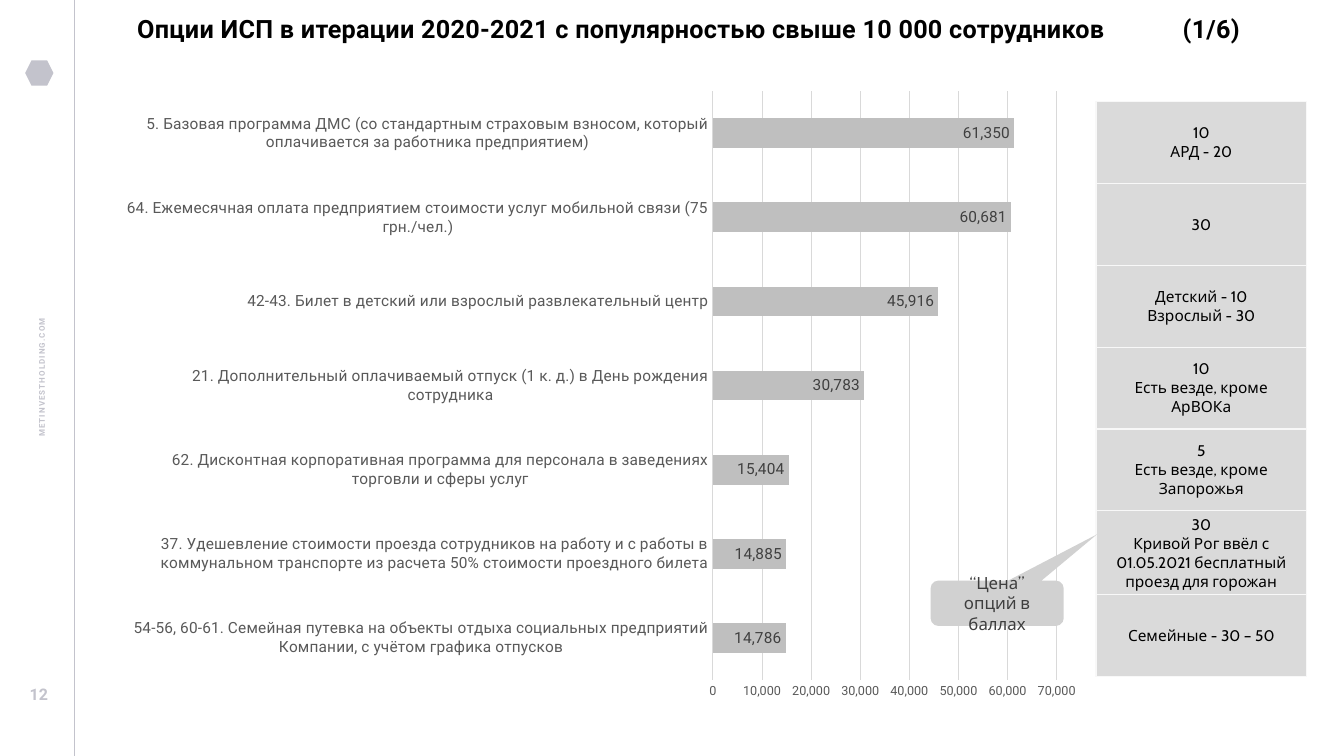
from lxml.etree import SubElement as Sub
from pptx import Presentation
from pptx.chart.data import CategoryChartData
from pptx.dml.color import RGBColor
from pptx.enum.chart import XL_CHART_TYPE as Kind, XL_LABEL_POSITION as Pos, XL_TICK_MARK as Tick
from pptx.enum.shapes import MSO_CONNECTOR as Link, MSO_SHAPE as Shape
from pptx.enum.text import MSO_ANCHOR as Anchor, PP_ALIGN as Align
from pptx.oxml import parse_xml
from pptx.oxml.ns import nsdecls, qn
from pptx.util import Inches, Pt

BLACK = RGBColor(0x00, 0x00, 0x00)
SIDE = RGBColor(0xC3, 0xC3, 0xCC)
GRID = RGBColor(0xD9, 0xD9, 0xD9)
BAR = RGBColor(0xBF, 0xBF, 0xBF)
LABEL = RGBColor(0x40, 0x40, 0x40)
AXIS = RGBColor(0x59, 0x59, 0x59)
CELL = RGBColor(0xDA, 0xDA, 0xDA)
EDGE = RGBColor(0xF8, 0xF8, 0xF8)
NOTE = RGBColor(0xD1, 0xD1, 0xD1)
INK = RGBColor(0x3E, 0x3E, 0x3E)

# Option, number of employees, price in points (top to bottom)
OPTIONS = [
    ("5. Базовая программа ДМС (со стандартным страховым взносом, который "
     "оплачивается за работника предприятием)", 61350, ["10", "АРД - 20"]),
    ("64. Ежемесячная оплата предприятием стоимости услуг мобильной связи "
     "(75 грн./чел.)", 60681, ["30"]),
    ("42-43. Билет в детский или взрослый развлекательный центр", 45916,
     ["Детский - 10", "Взрослый - 30"]),
    ("21. Дополнительный оплачиваемый отпуск (1 к. д.) в День рождения "
     "сотрудника", 30783, ["10", "Есть везде, кроме АрВОКа"]),
    ("62. Дисконтная корпоративная программа для персонала в заведениях "
     "торговли и сферы услуг", 15404, ["5", "Есть везде, кроме Запорожья"]),
    ("37. Удешевление стоимости проезда сотрудников на работу и с работы в "
     "коммунальном транспорте из расчета 50% стоимости проездного билета", 14885,
     ["30", "Кривой Рог ввёл с 01.05.2021 бесплатный проезд для горожан"]),
    ("54-56, 60-61. Семейная путевка на объекты отдыха социальных предприятий "
     "Компании, с учётом графика отпусков", 14786, ["Семейные - 30 – 50"]),
]


def style(font, size, color, name="Roboto", bold=False):
    font.size, font.name, font.bold = Pt(size), name, bold
    font.color.rgb = color


def write(frame, lines, size, color, name="Roboto", bold=False, align=Align.CENTER, track=0):
    """Fill a text frame, one paragraph per line; track is letter spacing in points."""
    frame.word_wrap = True
    for i, line in enumerate(lines):
        para = frame.add_paragraph() if i else frame.paragraphs[0]
        para.alignment = align
        run = para.add_run()
        run.text = line
        style(run.font, size, color, name, bold)
        if track:
            run.font._element.set("spc", str(round(track * 100)))


deck = Presentation()
deck.slide_width, deck.slide_height = Inches(13.33), Inches(7.5)
slide = deck.slides.add_slide(deck.slide_layouts[6])
shapes = slide.shapes

# Side strip
mark = shapes.add_shape(Shape.HEXAGON, Inches(0.25), Inches(0.6), Inches(0.28), Inches(0.25))
mark.shadow.inherit = False
mark.fill.solid()
mark.fill.fore_color.rgb = SIDE
mark.line.fill.background()

site = shapes.add_textbox(Inches(-2.6), Inches(3.61), Inches(5.98), Inches(0.27))
site.rotation = 270
write(site.text_frame, ["METINVESTHOLDING.COM"], 5.7, SIDE, bold=True, track=0.8)
site.text_frame.vertical_anchor = Anchor.MIDDLE
site.text_frame.paragraphs[0].line_spacing = 1.5

rule = shapes.add_connector(Link.STRAIGHT, Inches(0.74), Inches(7.5), Inches(0.74), Inches(0))
rule.line.color.rgb = SIDE
rule.line.width = Pt(0.5)
Sub(rule._element.spPr, qn("a:effectLst"))

page = shapes.add_textbox(Inches(0), Inches(6.74), Inches(0.77), Inches(0.29))
write(page.text_frame, ["12"], 11.4, SIDE, bold=True)

# Chart
data = CategoryChartData(number_format="#,##0")
data.categories = [name for name, _, _ in reversed(OPTIONS)]
data.add_series("Series 1", [count for _, count, _ in reversed(OPTIONS)])
chart = shapes.add_chart(Kind.BAR_CLUSTERED, Inches(1.13), Inches(0.78),
                         Inches(9.74), Inches(6.28), data).chart
chart.has_legend = chart.has_title = False
style(chart.font, 10, BLACK)

names, scale = chart.category_axis, chart.value_axis
for axis, size in ((names, 11), (scale, 9)):
    axis.major_tick_mark = axis.minor_tick_mark = Tick.NONE
    style(axis.tick_labels.font, size, AXIS)
names.format.line.color.rgb = GRID
names.format.line.width = Pt(0.75)
scale.minimum_scale, scale.maximum_scale, scale.major_unit = 0, 70000, 10000
scale.format.line.fill.background()
scale.major_gridlines.format.line.color.rgb = GRID
scale.major_gridlines.format.line.width = Pt(0.75)
scale.tick_labels.number_format = "#,##0"
scale.tick_labels.number_format_is_linked = False

plot = chart.plots[0]
plot.gap_width = 182
plot.vary_by_categories = False
bars = plot.series[0].format
bars.fill.solid()
bars.fill.fore_color.rgb = BAR
plot.has_data_labels = True
tags = plot.data_labels
tags.show_value = True
tags.position = Pos.INSIDE_END
tags.number_format = "#,##0"
tags.number_format_is_linked = False
style(tags.font, 11, LABEL)

area = chart._chartSpace.chart.plotArea
for old in area.findall(qn("c:layout")):
    area.remove(old)
area.insert(0, parse_xml(
    f'<c:layout {nsdecls("c")}><c:manualLayout><c:layoutTarget val="inner"/>'
    '<c:xMode val="edge"/><c:yMode val="edge"/><c:x val="0.61"/><c:y val="0.02"/>'
    '<c:w val="0.35"/><c:h val="0.93"/></c:manualLayout></c:layout>'))

# Title
title = shapes.add_textbox(Inches(1.36), Inches(0.13), Inches(11.51), Inches(0.71))
tabs = Sub(title.text_frame.paragraphs[0]._p.get_or_add_pPr(), qn("a:tabLst"))
Sub(tabs, qn("a:tab"), pos=str(Inches(10.37)), algn="l")
write(title.text_frame,
      ["Опции ИСП в итерации 2020-2021 с популярностью свыше 10 000 сотрудников\t(1/6)"],
      18, BLACK, bold=True, align=Align.LEFT, track=0.2)
for box in (site, title):
    frame = box.text_frame
    frame.margin_left = frame.margin_right = frame.margin_top = frame.margin_bottom = 0

# Prices
table = shapes.add_table(len(OPTIONS), 1, Inches(10.87), Inches(1.01),
                         Inches(2.09), Inches(5.68)).table
table.first_row = table.horz_banding = False
for row, (_, _, price) in enumerate(OPTIONS):
    cell = table.cell(row, 0)
    cell.vertical_anchor = Anchor.MIDDLE
    write(cell.text_frame, price, 11, BLACK, "Cabin")
    props = cell._tc.get_or_add_tcPr()
    for side in ("lnL", "lnR", "lnT", "lnB"):
        edge = Sub(props, qn(f"a:{side}"), w=str(Pt(1)))
        Sub(Sub(edge, qn("a:solidFill")), qn("a:srgbClr"), val=str(EDGE))
    cell.fill.solid()
    cell.fill.fore_color.rgb = CELL

# Callout
note = shapes.add_shape(Shape.ROUNDED_RECTANGULAR_CALLOUT, Inches(9.23), Inches(5.76),
                        Inches(1.32), Inches(0.45))
note.adjustments[0], note.adjustments[1], note.adjustments[2] = 0.75, -1.52, 0.17
note.shadow.inherit = False
note.fill.solid()
note.fill.fore_color.rgb = NOTE
note.line.fill.background()
note.text_frame.vertical_anchor = Anchor.MIDDLE
write(note.text_frame, ["“Цена” опций в баллах"], 12, INK, "Cabin")

deck.save("out.pptx")
